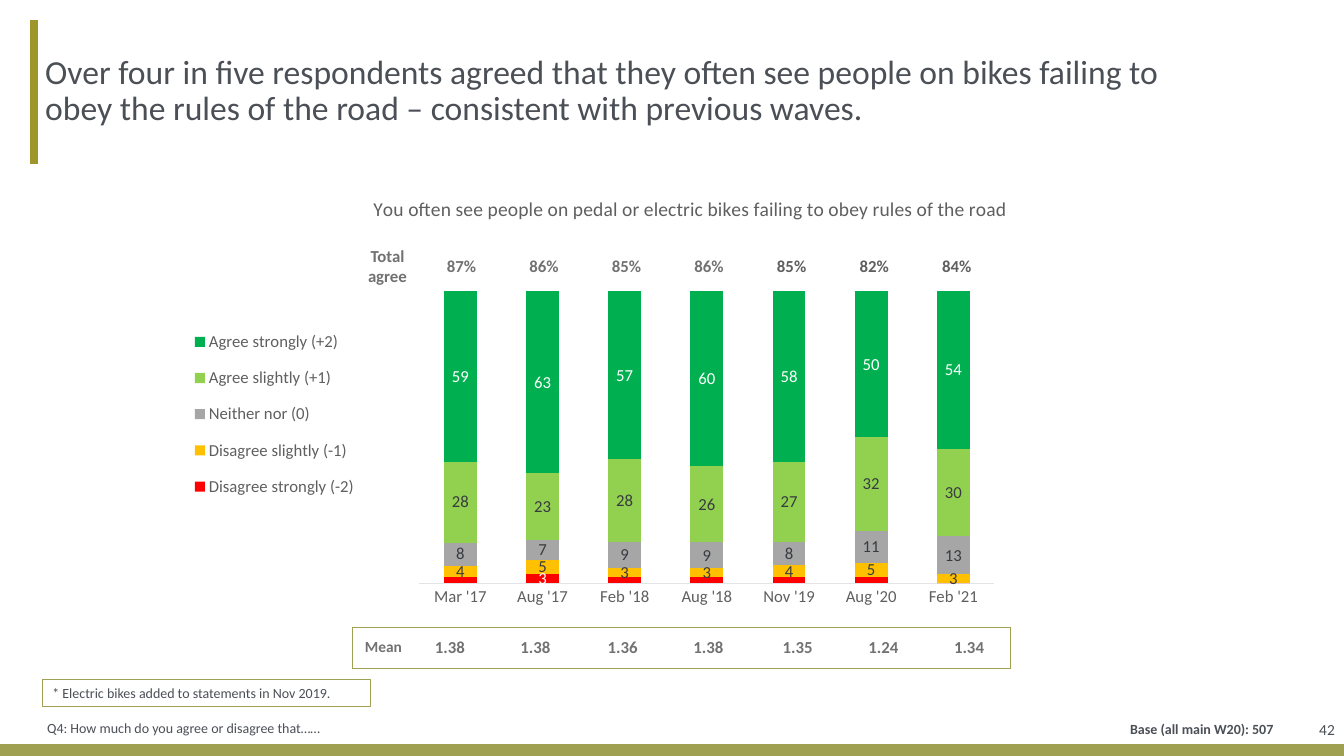
from lxml import etree
from pptx import Presentation
from pptx.chart.data import CategoryChartData
from pptx.dml.color import RGBColor
from pptx.enum.chart import XL_CHART_TYPE, XL_LEGEND_POSITION, XL_TICK_LABEL_POSITION, XL_TICK_MARK
from pptx.enum.shapes import MSO_CONNECTOR, MSO_SHAPE
from pptx.enum.text import MSO_ANCHOR, MSO_AUTO_SIZE, PP_ALIGN
from pptx.oxml.ns import qn
from pptx.util import Cm, Pt

STACK = XL_CHART_TYPE.COLUMN_STACKED_100
SIDE = XL_LEGEND_POSITION.LEFT
BARE = XL_TICK_LABEL_POSITION.NONE
NO_TICK = XL_TICK_MARK.NONE
RECT = MSO_SHAPE.RECTANGLE
STRAIGHT = MSO_CONNECTOR.STRAIGHT
TOP, MIDDLE = MSO_ANCHOR.TOP, MSO_ANCHOR.MIDDLE
FIXED = MSO_AUTO_SIZE.NONE
LEFT, CENTER, RIGHT = PP_ALIGN.LEFT, PP_ALIGN.CENTER, PP_ALIGN.RIGHT

FONT = "Calibri"
INK = RGBColor(0x4B, 0x4F, 0x56)
DARK = RGBColor(0x38, 0x3B, 0x40)
GREY = RGBColor(0x5F, 0x5F, 0x5F)
SOFT = RGBColor(0x71, 0x71, 0x71)
PALE = RGBColor(0xE3, 0xE4, 0xE7)
WHITE = RGBColor(0xFF, 0xFF, 0xFF)
OLIVE = RGBColor(0x9F, 0xA0, 0x52)
MOSS = RGBColor(0x9F, 0x96, 0x2B)
RED = RGBColor(0xFF, 0x00, 0x00)
AMBER = RGBColor(0xFF, 0xC0, 0x00)
STONE = RGBColor(0xA6, 0xA6, 0xA6)
LIME = RGBColor(0x92, 0xD0, 0x50)
GREEN = RGBColor(0x00, 0xB0, 0x50)


def write(frame, text, size=10, color=INK, bold=False, align=LEFT, anchor=TOP):
    frame.word_wrap = True
    frame.vertical_anchor = anchor
    para = frame.paragraphs[0]
    para.alignment = align
    run = para.add_run()
    run.text = text
    font = run.font
    font.name, font.size, font.bold = FONT, Pt(size), bold
    font.color.rgb = color
    return para


def place(node, index, **spots):
    old = node.find(qn("c:layout"))
    if old is not None:
        node.remove(old)
    layout = etree.Element(qn("c:layout"))
    manual = etree.SubElement(layout, qn("c:manualLayout"))
    for tag, value in spots.items():
        etree.SubElement(manual, qn("c:" + tag)).set("val", str(value))
    node.insert(index, layout)


deck = Presentation()
deck.slide_width, deck.slide_height = Cm(33.87), Cm(19.05)
slide = deck.slides.add_slide(deck.slide_layouts[5])
shapes = slide.shapes

title = shapes.title
title.left, title.top, title.width, title.height = Cm(0.94), Cm(0.51), Cm(29.59), Cm(3.61)
frame = title.text_frame
frame.auto_size = FIXED
frame.margin_left = Cm(0.2)
frame.margin_top = frame.margin_right = frame.margin_bottom = 0
write(frame, "Over four in five respondents agreed that they often see people on bikes failing to "
      "obey the rules of the road – consistent with previous waves.",
      size=24, anchor=MIDDLE).line_spacing = 0.9

base = shapes.add_shape(RECT, 0, Cm(18.75), Cm(33.87), Cm(0.38))
base.shadow.inherit = False
base.fill.solid()
base.fill.fore_color.rgb = OLIVE
base.line.fill.background()

accent = shapes.add_connector(STRAIGHT, Cm(0.86), Cm(0.51), Cm(0.86), Cm(4.14))
accent.line.color.rgb = MOSS
accent.line.width = Pt(6)
etree.SubElement(accent._element.spPr, qn("a:effectLst"))

notes = [
    ("42", (31.55, 17.65, 2.34, 1.47), dict(size=11, align=RIGHT, anchor=MIDDLE)),
    ("Q4: How much do you agree or disagree that……", (0.94, 18.01, 24.03, 0.69), dict(anchor=MIDDLE)),
    ("Base (all main W20): 507", (22.33, 18.03, 10.01, 0.81), dict(bold=True, align=RIGHT)),
]
for text, box, style in notes:
    area = shapes.add_textbox(*map(Cm, box))
    write(area.text_frame, text, **style)

note = shapes.add_shape(RECT, Cm(1.07), Cm(17.12), Cm(8.28), Cm(0.69))
note.shadow.inherit = False
note.fill.background()
note.line.color.rgb = OLIVE
note.line.width = Pt(0.75)
write(note.text_frame, "* Electric bikes added to statements in Nov 2019.")

data = CategoryChartData(number_format="#,##0")
data.categories = ["Feb '21", "Aug '20", "Nov '19", "Aug '18", "Feb '18", "Aug '17", "Mar '17"]
answers = [
    ("Disagree strongly (-2)", (0, 2, 2, 2, 2, 3, 2), RED, WHITE),
    ("Disagree slightly (-1)", (3, 5, 4, 3, 3, 5, 4), AMBER, DARK),
    ("Neither nor (0)", (13, 11, 8, 9, 9, 7, 8), STONE, DARK),
    ("Agree slightly (+1)", (30, 32, 27, 26, 28, 23, 28), LIME, DARK),
    ("Agree strongly (+2)", (54, 50, 58, 60, 57, 63, 59), GREEN, WHITE),
]
for name, values, fill, ink in answers:
    data.add_series(name, values)
chart = shapes.add_chart(STACK, Cm(4.52), Cm(4.14), Cm(20.96), Cm(11.56), data).chart
chart.font.name, chart.font.size = FONT, Pt(12)
chart.font.color.rgb = GREY

chart.has_title = True
write(chart.chart_title.text_frame,
      "You often see people on pedal or electric bikes failing to obey rules of the road",
      size=14, color=GREY, align=CENTER)
place(chart.chart_title._element, 1, xMode="edge", yMode="edge", x=0.23, y=0.06)

chart.has_legend = True
legend = chart.legend
legend.position = SIDE
legend.include_in_layout = False
legend.font.name, legend.font.size = FONT, Pt(12)
legend.font.color.rgb = GREY
place(legend._element, 1, xMode="edge", yMode="edge", x=0.01, y=0.33, w=0.21, h=0.43)
place(chart._chartSpace.chart.plotArea, 0, layoutTarget="inner", xMode="edge", yMode="edge",
      x=0.29, y=0.277, w=0.695, h=0.636)

months = chart.category_axis
months.reverse_order = True
months.major_tick_mark = NO_TICK
months.format.line.color.rgb = PALE
months.format.line.width = Pt(0.75)
scale = chart.value_axis
scale.has_major_gridlines = False
scale.major_tick_mark = NO_TICK
scale.tick_label_position = BARE
scale.format.line.fill.background()

plot = chart.plots[0]
plot.gap_width, plot.overlap, plot.vary_by_categories = 150, 100, False
for series, (name, values, fill, ink) in zip(plot.series, answers):
    series.format.fill.solid()
    series.format.fill.fore_color.rgb = fill
    labels = series.data_labels
    labels.show_value = fill != RED
    labels.number_format, labels.number_format_is_linked = "#,##0", False
    fonts = [labels.font]
    if fill == RED:
        fonts.append(series.points[5].data_label.font)
    for font in fonts:
        font.name, font.size = FONT, Pt(12)
        font.color.rgb = ink

tables = [
    (15.8, [1.45, 1.9, 2.41, 1.98, 2.34] + [2.16] * 3, True, 11, SOFT,
     ["Mean", "1.38", "1.38", "1.36", "1.38", "1.35", "1.24", "1.34"]),
    (6.2, [1.65] + [2.08] * 7, False, 12, GREY,
     ["Total agree", "87%", "86%", "85%", "86%", "85%", "82%", "84%"]),
]
for top, widths, framed, size, late, texts in tables:
    grid = shapes.add_table(1, 8, Cm(8.89), Cm(top), Cm(sum(widths)), Cm(1.04)).table
    grid.first_row = grid.horz_banding = False
    grid._tbl.tblPr.find(qn("a:tableStyleId")).text = "{2D5ABB26-0587-4C30-8999-92F81FD0307C}"
    for col, (width, text) in enumerate(zip(widths, texts)):
        grid.columns[col].width = Cm(width)
        cell = grid.cell(0, col)
        cell.fill.background()
        cell.margin_left, cell.margin_right = Cm(0.28), Cm(0.18)
        cell.margin_top = cell.margin_bottom = 0
        cell.vertical_anchor = MIDDLE
        write(cell.text_frame, text, size=12 if col else size,
              color=late if col > 4 else SOFT, bold=True, align=CENTER, anchor=MIDDLE)
        edges = [("L", col == 0), ("R", col == 7), ("T", True), ("B", True)]
        drawn = [edge for edge, shown in edges if framed and shown]
        for spot, edge in enumerate(drawn):
            line = etree.Element(qn("a:ln" + edge), w="6350")
            solid = etree.SubElement(line, qn("a:solidFill"))
            etree.SubElement(solid, qn("a:srgbClr"), val=str(OLIVE))
            cell._tc.tcPr.insert(spot, line)

deck.save("out.pptx")
